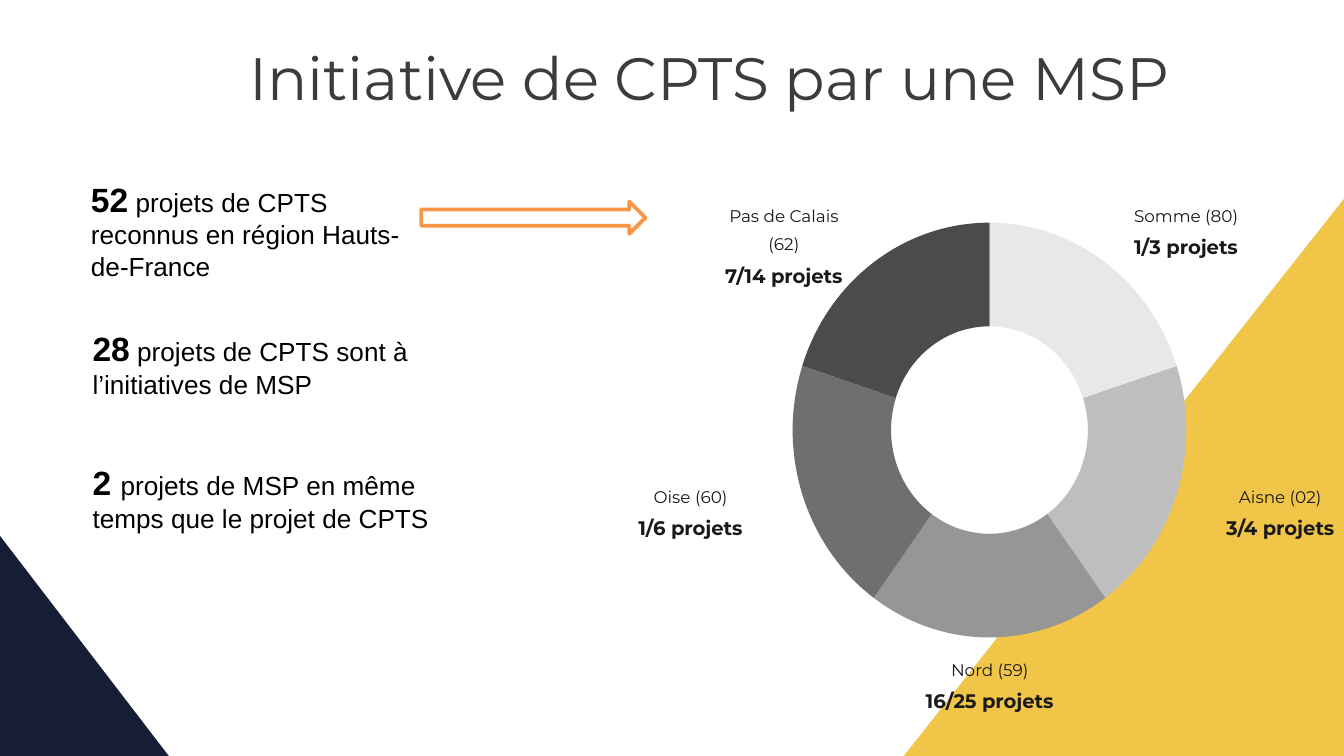
from math import cos, radians, sin, tan

from pptx import Presentation
from pptx.dml.color import RGBColor
from pptx.enum.shapes import MSO_SHAPE
from pptx.enum.text import MSO_ANCHOR, MSO_AUTO_SIZE, PP_ALIGN
from pptx.oxml.ns import qn
from pptx.oxml.xmlchemy import OxmlElement
from pptx.util import Cm, Pt

RIGHT_ARROW = MSO_SHAPE.RIGHT_ARROW
TOP = MSO_ANCHOR.TOP
NO_AUTOSIZE = MSO_AUTO_SIZE.NONE
CENTER, LEFT = PP_ALIGN.CENTER, PP_ALIGN.LEFT

WHITE = RGBColor(0xFF, 0xFF, 0xFF)
BLACK = RGBColor(0x00, 0x00, 0x00)
TITLE_GREY = RGBColor(0x3A, 0x3C, 0x3D)
LABEL_GREY = RGBColor(0x19, 0x19, 0x19)
YELLOW = RGBColor(0xF1, 0xC6, 0x48)
NAVY = RGBColor(0x15, 0x1E, 0x34)
ORANGE = RGBColor(0xF7, 0x96, 0x46)
SOMME_GREY = RGBColor(0xE9, 0xE8, 0xE8)
AISNE_GREY = RGBColor(0xBF, 0xBE, 0xBE)
NORD_GREY = RGBColor(0x96, 0x96, 0x96)
OISE_GREY = RGBColor(0x70, 0x6F, 0x70)
CALAIS_GREY = RGBColor(0x4B, 0x4B, 0x4C)
SEAM_GREY = RGBColor(0x53, 0x53, 0x53)

TITLE_FONT = {"name": "Montserrat", "size": Pt(32), "bold": False}
DEPARTMENT_FONT = {"name": "Montserrat", "size": Pt(9), "bold": False}
COUNT_FONT = {"name": "Montserrat", "size": Pt(10.5), "bold": True}
FIGURE_FONT = {"name": "Arial", "size": Pt(18), "bold": True}
STATEMENT_FONT = {"name": "Arial", "size": Pt(14), "bold": False}
NO_MARGINS = {"margin_left": 0, "margin_right": 0, "margin_top": 0, "margin_bottom": 0}
FRAME = {"word_wrap": True, "auto_size": NO_AUTOSIZE, "vertical_anchor": TOP}

prs = Presentation()
prs.slide_width, prs.slide_height = Cm(25.4), Cm(14.29)
slide = prs.slides.add_slide(prs.slide_layouts[5])
shapes = slide.shapes


def write_run(paragraph, text, font_format, color):
    run = paragraph.add_run()
    run.text = text
    for key, value in font_format.items():
        setattr(run.font, key, value)
    run.font.color.rgb = color


def draw_outline(points, color):
    corners = [(Cm(x), Cm(y)) for x, y in points]
    builder = shapes.build_freeform(*corners[0])
    builder.add_line_segments(corners[1:], close=True)
    outline = builder.convert_to_shape()
    outline.shadow.inherit = False
    outline.fill.solid()
    outline.fill.fore_color.rgb = color
    outline.line.fill.background()
    return outline


title = shapes.title
title.left, title.top, title.width, title.height = Cm(3.38), Cm(0.78), Cm(20.06), Cm(1.37)
for key, value in {**FRAME, **NO_MARGINS}.items():
    setattr(title.text_frame, key, value)
heading = title.text_frame.paragraphs[0]
heading.alignment = CENTER
write_run(heading, "Initiative de CPTS par une MSP", TITLE_FONT, TITLE_GREY)

draw_outline([(27.99, 0.48), (27.99, 14.76), (16.71, 14.76)], YELLOW)
draw_outline([(3.19, 14.29), (-7.77, 14.29), (-7.77, 0)], NAVY)

departments = [
    ("Somme (80)", "1/3 projets", 21.35, 3.73, 2.13, 1.17),
    ("Aisne (02)", "3/4 projets", 22.99, 9.04, 2.41, 1.17),
    ("Nord (59)", "16/25 projets", 17.45, 12.32, 2.51, 1.17),
    ("Oise (60)", "1/6 projets", 11.69, 9.04, 2.72, 1.17),
    ("Pas de Calais (62)", "7/14 projets", 13.57, 3.74, 2.49, 1.7),
]
for department, count, left, top, width, height in departments:
    label = shapes.add_textbox(Cm(left), Cm(top), Cm(width), Cm(height)).text_frame
    for key, value in {**FRAME, **NO_MARGINS}.items():
        setattr(label, key, value)
    write_run(label.paragraphs[0], department, DEPARTMENT_FONT, LABEL_GREY)
    write_run(label.add_paragraph(), count, COUNT_FONT, LABEL_GREY)
    for paragraph in label.paragraphs:
        paragraph.alignment = CENTER
        paragraph.line_spacing = 1.4

CENTER_X, CENTER_Y = 18.7, 8.13
RADIUS_X, RADIUS_Y = 3.72, 3.92
HOLE = 0.5
slices = [
    (0, 72, SOMME_GREY),
    (72, 72, AISNE_GREY),
    (144, 72, NORD_GREY),
    (216, 72, OISE_GREY),
    (288, 72, CALAIS_GREY),
    (0, 0.1, SEAM_GREY),
]
for start, sweep, grey in slices:
    first, last = radians(start), radians(start + sweep)
    pull = 4 / 3 * tan(radians(sweep) / 4)
    arc = [
        (sin(first), -cos(first)),
        (sin(first) + pull * cos(first), -cos(first) + pull * sin(first)),
        (sin(last) - pull * cos(last), -cos(last) - pull * sin(last)),
        (sin(last), -cos(last)),
    ]
    rim = arc + [(HOLE * x, HOLE * y) for x, y in reversed(arc)]
    ring_slice = draw_outline(
        [(CENTER_X + RADIUS_X * x, CENTER_Y + RADIUS_Y * y) for x, y in rim], grey
    )
    segments = list(ring_slice.element.iter(qn("a:lnTo")))
    for arc_segments in (segments[:3], segments[4:]):
        curve = OxmlElement("a:cubicBezTo")
        arc_segments[0].addprevious(curve)
        for segment in arc_segments:
            curve.append(segment[0])
            segment.getparent().remove(segment)

statements = [
    ("52", " projets de CPTS reconnus en région Hauts-de-France", 1.47, 3.25, 2.24),
    ("28", " projets de CPTS sont à l’initiatives de MSP", 1.5, 6.07, 1.63),
    ("2 ", "projets de MSP en même temps que le projet de CPTS", 1.5, 8.61, 1.63),
]
for figure, wording, left, top, height in statements:
    statement = shapes.add_textbox(Cm(left), Cm(top), Cm(6.99), Cm(height)).text_frame
    for key, value in FRAME.items():
        setattr(statement, key, value)
    sentence = statement.paragraphs[0]
    sentence.alignment = LEFT
    write_run(sentence, figure, FIGURE_FONT, BLACK)
    write_run(sentence, wording, STATEMENT_FONT, BLACK)

arrow = shapes.add_shape(RIGHT_ARROW, Cm(7.96), Cm(3.81), Cm(4.24), Cm(0.61))
arrow.shadow.inherit = False
arrow.fill.solid()
arrow.fill.fore_color.rgb = WHITE
arrow.line.color.rgb = ORANGE
arrow.line.width = Pt(2)

prs.save("out.pptx")
